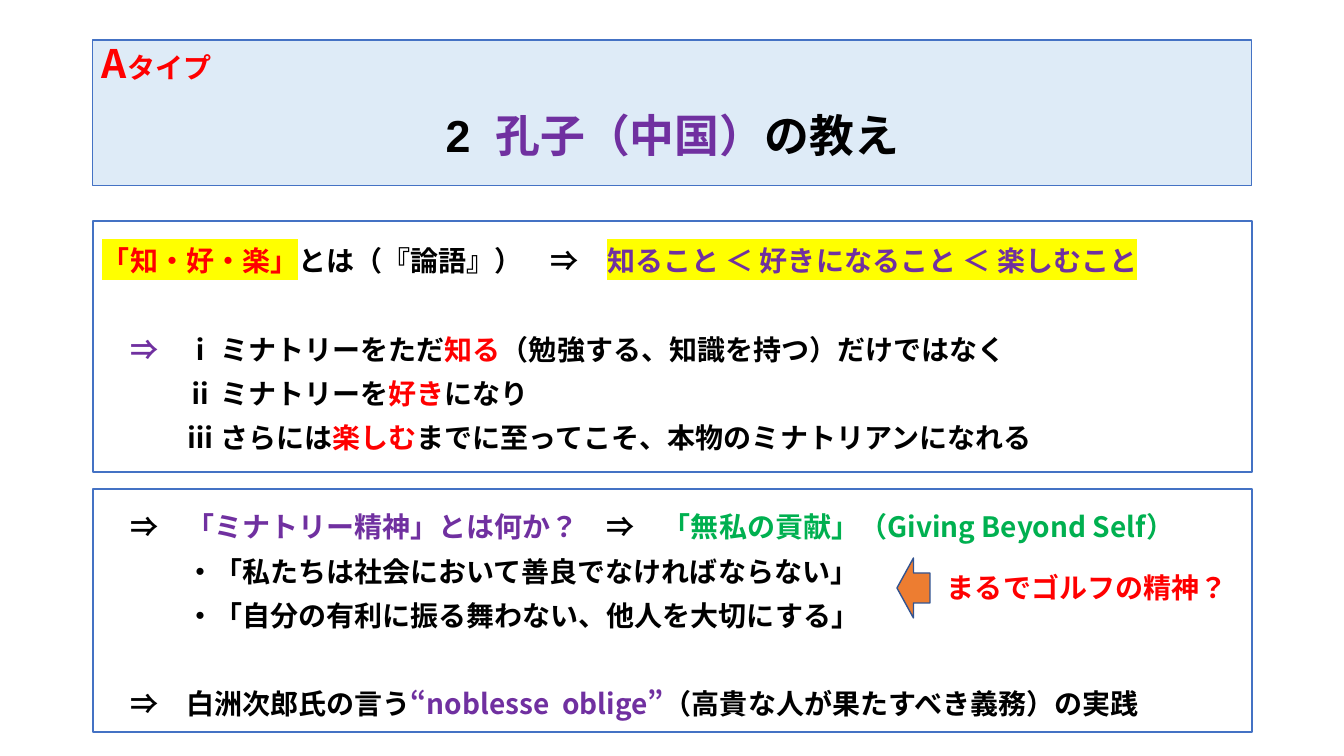
from dataclasses import dataclass

from lxml.etree import SubElement
from pptx import Presentation
from pptx.dml.color import RGBColor
from pptx.enum.lang import MSO_LANGUAGE_ID
from pptx.enum.shapes import MSO_SHAPE
from pptx.enum.text import MSO_ANCHOR, MSO_AUTO_SIZE, PP_ALIGN
from pptx.oxml.ns import qn
from pptx.util import Emu, Pt


@dataclass(frozen=True)
class Theme:
    black: str = "000000"
    red: str = "FF0000"
    purple: str = "7030A0"
    green: str = "00B050"
    marker: str = "FFFF00"
    white: str = "FFFFFF"
    pale_blue: str = "DEEBF7"
    border: str = "4472C4"
    orange: str = "ED7D31"
    arrow_border: str = "325491"
    font: str = "Noto Sans CJK JP"
    latin: str = "Arial"
    title: int = 32
    letter: int = 28
    body: int = 20


THEME = Theme()

# Content: runs are (text, colour) with an optional highlight
TITLE = [("2  ", THEME.black), ("孔子（中国）", THEME.purple), ("の教え", THEME.black)]
TYPE_LABEL = [("A", THEME.red, THEME.letter), ("タイプ", THEME.red, THEME.body)]
GOLF_NOTE = "まるでゴルフの精神？"

# Lines are (layout, blank line above, runs)
TEACHING = [
    ("flush", False, [
        ("「知・好・楽」", THEME.red, THEME.marker),
        ("とは（『論語』）　⇒　", THEME.black),
        ("知ること ＜ 好きになること ＜ 楽しむこと", THEME.purple, THEME.marker)]),
    ("arrow", True, [
        ("⇒\t", THEME.purple), ("ⅰ ミナトリーをただ", THEME.black), ("知る", THEME.red),
        ("（勉強する、知識を持つ）だけではなく", THEME.black)]),
    ("indent", False, [
        ("ⅱ ミナトリーを", THEME.black), ("好き", THEME.red), ("になり", THEME.black)]),
    ("indent", False, [
        ("ⅲ さらには", THEME.black), ("楽しむ", THEME.red),
        ("までに至ってこそ、本物のミナトリアンになれる", THEME.black)]),
]
SPIRIT = [
    ("arrow", False, [
        ("⇒\t", THEME.black), ("「ミナトリー精神」とは何か？　", THEME.purple),
        ("⇒　", THEME.black), ("「無私の貢献」（Giving Beyond Self）", THEME.green)]),
    ("indent", False, [("・「私たちは社会において善良でなければならない」", THEME.black)]),
    ("indent", False, [("・「自分の有利に振る舞わない、他人を大切にする」", THEME.black)]),
    ("arrow", True, [
        ("⇒\t白洲次郎氏の言う", THEME.black), ("“noblesse  oblige”", THEME.purple),
        ("（高貴な人が果たすべき義務）の実践", THEME.black)]),
]

# Geometry in px
PX = 914400 / 100.8
SLIDE_SIZE = (1344, 756)
LEFT, WIDTH = 93, 1159
TITLE_BOX = (LEFT, 40, WIDTH, 146)
LABEL_BOX = (LEFT, 40, 165, 53)
NOTE_BOX = (938, 569, 314, 41)
ARROW_BOX = (897, 558, 33, 60)
PANELS = [((LEFT, 221, WIDTH, 251), 29, TEACHING), ((LEFT, 489, WIDTH, 243), 27, SPIRIT)]
INSET = 9
INDENTS = {"flush": (0, 0), "arrow": (84, -56), "indent": (84, 0)}

# Line rhythm: spacing factor, points between lines, points of one blank line
LEADING, LINE_GAP, BLANK_LINE = 0.81, 12.2, 31.4


def px(length):
    return Emu(round(length * PX))


def place(box):
    return [px(length) for length in box]


def add_span(para, text, color, size, highlight=None, font=THEME.font):
    span = para.add_run()
    span.text = text
    span.font.size = Pt(size)
    span.font.bold = True
    span.font.language_id = MSO_LANGUAGE_ID.JAPANESE
    span.font.color.rgb = RGBColor.from_string(color)
    properties = span.font._element
    if highlight:
        marker = SubElement(properties, qn("a:highlight"))
        SubElement(marker, qn("a:srgbClr"), val=highlight)
    span.font.name = font
    SubElement(properties, qn("a:ea"), typeface=THEME.font)


def set_frame(shape, top, anchor=MSO_ANCHOR.TOP):
    frame = shape.text_frame
    frame.word_wrap = True
    frame.auto_size = MSO_AUTO_SIZE.NONE
    frame.vertical_anchor = anchor
    frame.margin_left = frame.margin_right = px(INSET)
    frame.margin_top, frame.margin_bottom = px(top), px(5)
    return frame


def paint(shape, fill, line, width):
    shape.fill.solid()
    shape.fill.fore_color.rgb = RGBColor.from_string(fill)
    shape.line.color.rgb = RGBColor.from_string(line)
    shape.line.width = Pt(width)


def add_shape(page, kind, box, fill, line):
    shape = page.shapes.add_shape(kind, *place(box))
    shape.shadow.inherit = False
    paint(shape, fill, line, 1)
    return shape


def add_text_box(page, box):
    frame = set_frame(page.shapes.add_textbox(*place(box)), 5)
    para = frame.paragraphs[0]
    para.line_spacing = 0.9
    return para


def fill_panel(frame, lines):
    for number, (layout, blank_above, runs) in enumerate(lines):
        para = frame.add_paragraph() if number else frame.paragraphs[0]
        para.alignment = PP_ALIGN.LEFT
        para.line_spacing = LEADING
        para.space_before = Pt((LINE_GAP if number else 0) + BLANK_LINE * blank_above)
        margin, first_line = INDENTS[layout]
        properties = para._p.get_or_add_pPr()
        properties.set("marL", str(px(margin)))
        properties.set("indent", str(px(first_line)))
        for text, color, *highlight in runs:
            add_span(para, text, color, THEME.body, *highlight)


def main():
    deck = Presentation()
    deck.slide_width, deck.slide_height = place(SLIDE_SIZE)
    page = deck.slides.add_slide(deck.slide_layouts[5])

    # Title
    title = page.shapes.title
    title.left, title.top, title.width, title.height = place(TITLE_BOX)
    paint(title, THEME.pale_blue, THEME.border, 0.75)
    para = set_frame(title, 55, MSO_ANCHOR.MIDDLE).paragraphs[0]
    para.alignment = PP_ALIGN.CENTER
    para.line_spacing = 0.9
    for text, color in TITLE:
        add_span(para, text, color, THEME.title, font=THEME.latin)

    # Text panels
    for box, top, lines in PANELS:
        panel = add_shape(page, MSO_SHAPE.RECTANGLE, box, THEME.white, THEME.border)
        fill_panel(set_frame(panel, top), lines)

    # Type label, golf note and its arrow
    label = add_text_box(page, LABEL_BOX)
    for text, color, size in TYPE_LABEL:
        add_span(label, text, color, size)
    note = add_text_box(page, NOTE_BOX)
    add_span(note, GOLF_NOTE, THEME.red, THEME.body, font=THEME.latin)
    add_shape(page, MSO_SHAPE.LEFT_ARROW, ARROW_BOX, THEME.orange, THEME.arrow_border)

    deck.save("out.pptx")


if __name__ == "__main__":
    main()
